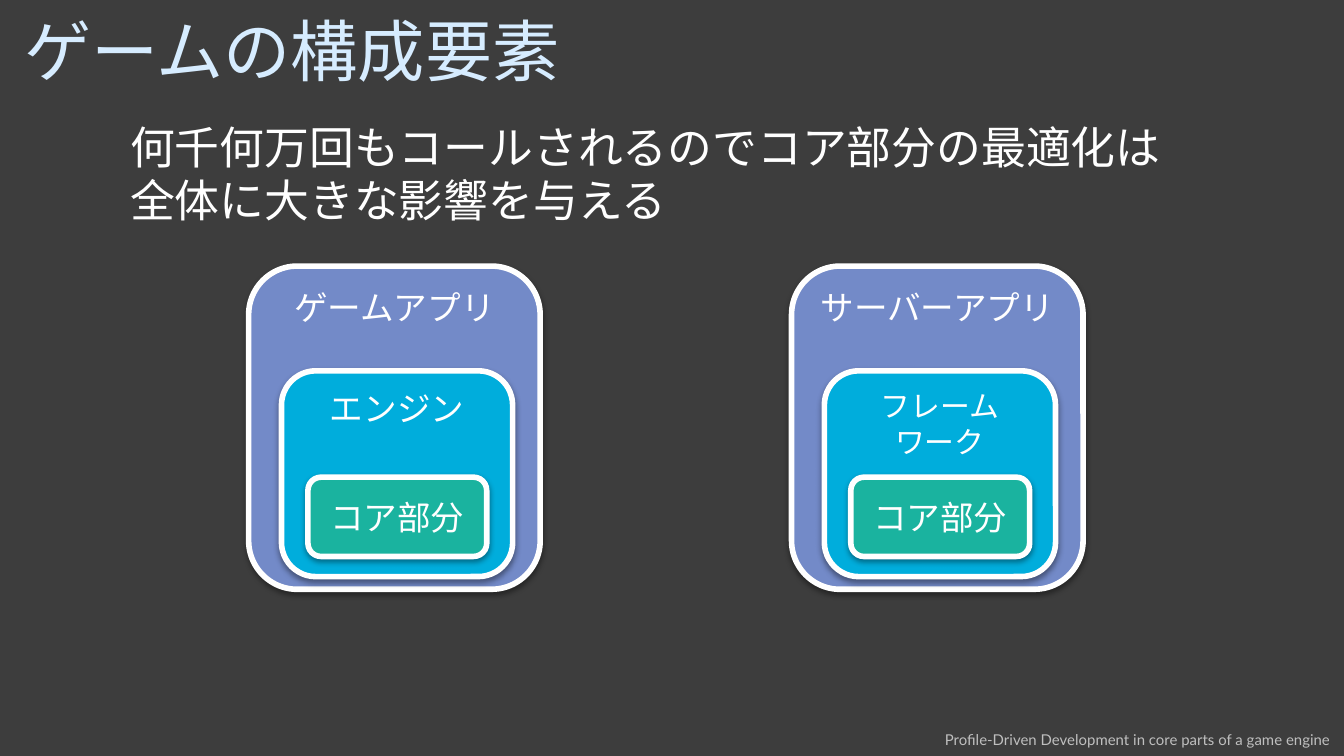
from lxml import etree
from pptx import Presentation
from pptx import util as u
from pptx.dml.color import RGBColor
from pptx.enum import shapes, text
from pptx.oxml import ns

BACKGROUND = RGBColor(0x3D, 0x3D, 0x3D)
TITLE_BLUE = RGBColor(0xD6, 0xEC, 0xFF)
WHITE = RGBColor(0xFF, 0xFF, 0xFF)
GRAY = RGBColor(0xBF, 0xBF, 0xBF)
APP_PURPLE = RGBColor(0x73, 0x8A, 0xC8)
LAYER_BLUE = RGBColor(0x00, 0xAD, 0xDC)
CORE_GREEN = RGBColor(0x1A, 0xB3, 0x9F)


def write(shape, lines, font_name, size, color, align):
    frame = shape.text_frame
    frame.word_wrap = True
    frame.text = "\n".join(lines)
    for paragraph in frame.paragraphs:
        paragraph.alignment = align
        paragraph.font.name = font_name
        paragraph.font.size = u.Pt(size)
        paragraph.font.color.rgb = color


def add_shadow(shape):
    shape.shadow.inherit = False
    effects = shape._element.spPr.find(ns.qn("a:effectLst"))
    shadow = etree.SubElement(
        effects, ns.qn("a:outerShdw"), blurRad=str(u.Pt(3.1)), dist=str(u.Pt(1.6)),
        dir="5400000", rotWithShape="0")
    color = etree.SubElement(shadow, ns.qn("a:srgbClr"), val="000000")
    etree.SubElement(color, ns.qn("a:alpha"), val="38000")


presentation = Presentation()
presentation.slide_width = u.Cm(25.4)
presentation.slide_height = u.Cm(14.29)
slide = presentation.slides.add_slide(presentation.slide_layouts[5])
slide.background.fill.solid()
slide.background.fill.fore_color.rgb = BACKGROUND

title = slide.shapes.title
title.left, title.top, title.width, title.height = u.Cm(0.2), u.Cm(0.1), u.Cm(24.87), u.Cm(1.68)
title.text_frame.auto_size = text.MSO_AUTO_SIZE.NONE
title.text_frame.vertical_anchor = text.MSO_ANCHOR.MIDDLE
write(title, ["ゲームの構成要素"], "Calibri", 36, TITLE_BLUE, text.PP_ALIGN.LEFT)

message = slide.shapes.add_textbox(u.Cm(2.21), u.Cm(2.13), u.Cm(20.12), u.Cm(2.31))
write(message, ["何千何万回もコールされるのでコア部分の最適化は全体に大きな影響を与える"],
      "Arial", 24, WHITE, text.PP_ALIGN.LEFT)

footer = slide.shapes.add_textbox(u.Cm(15.7), u.Cm(13.69), u.Cm(9.7), u.Cm(0.6))
write(footer, ["Profile-Driven Development in core parts of a game engine"],
      "Lato", 8, GRAY, text.PP_ALIGN.RIGHT)

layers = [
    (0, 5.03, 5.51, 6.11, APP_PURPLE, text.MSO_ANCHOR.TOP),
    (0.62, 7.01, 4.37, 3.89, LAYER_BLUE, text.MSO_ANCHOR.TOP),
    (1.12, 9.02, 3.38, 1.5, CORE_GREEN, text.MSO_ANCHOR.MIDDLE),
]
stacks = [
    (4.7, [(["ゲームアプリ"], 18), (["エンジン"], 18), (["コア部分"], 18)]),
    (14.96, [(["サーバーアプリ"], 18), (["フレーム", "ワーク"], 16), (["コア部分"], 18)]),
]
for stack_left, labels in stacks:
    for (inset, top, width, height, color, anchor), (lines, size) in zip(layers, labels):
        box = slide.shapes.add_shape(
            shapes.MSO_SHAPE.ROUNDED_RECTANGLE,
            u.Cm(stack_left + inset), u.Cm(top), u.Cm(width), u.Cm(height))
        box.fill.solid()
        box.fill.fore_color.rgb = color
        box.line.color.rgb = WHITE
        box.line.width = u.Pt(3)
        add_shadow(box)
        box.text_frame.vertical_anchor = anchor
        write(box, lines, "Calibri", size, WHITE, text.PP_ALIGN.CENTER)

presentation.save("out.pptx")
